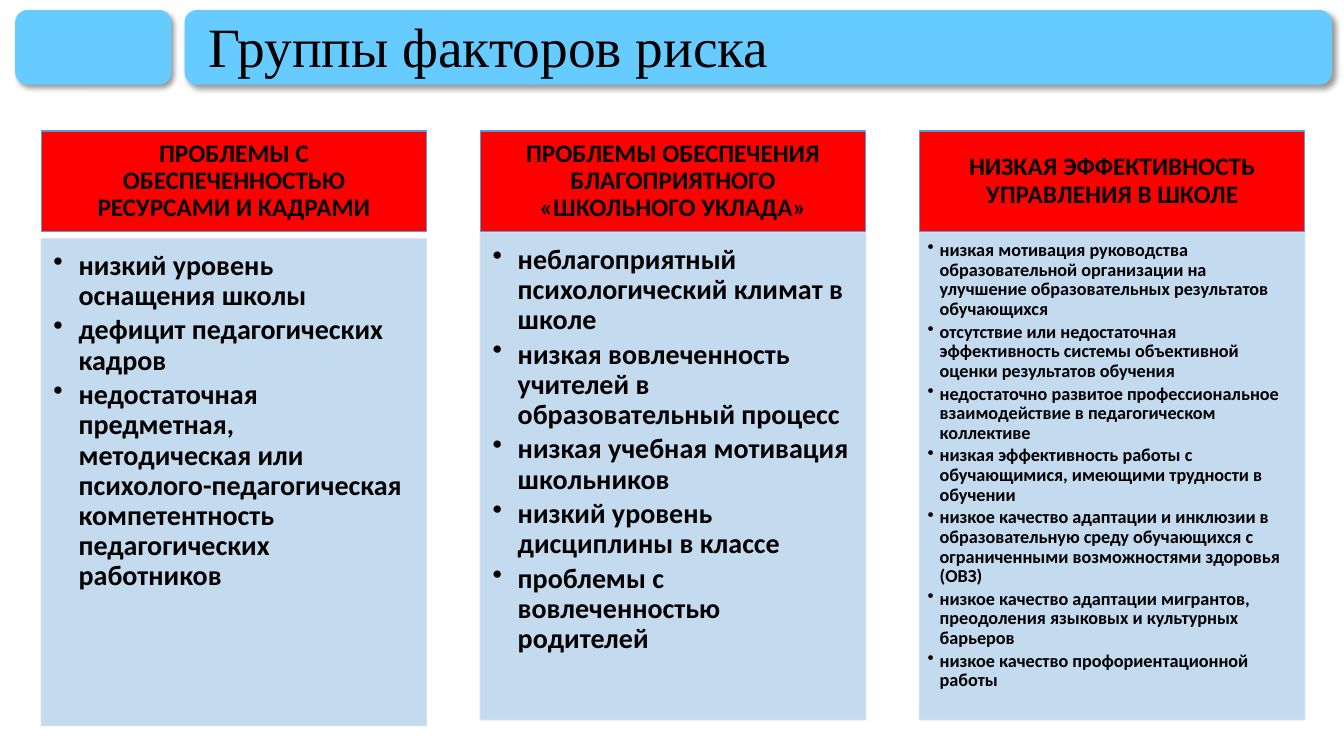
from lxml import etree
from pptx import Presentation
from pptx import util as u
from pptx.dml.color import RGBColor
from pptx.enum import shapes, text
from pptx.oxml.ns import qn

# Content
TITLE = "Группы факторов риска"
LARGE = dict(size=20, indent=0.25, insets=(0.12, 0.12, 0.16, 0.17))
SMALL = dict(size=13, indent=0.12, insets=(0.08, 0.08, 0.1, 0.11))
GROUPS = [
    dict(heading="ПРОБЛЕМЫ С ОБЕСПЕЧЕННОСТЬЮ РЕСУРСАМИ И КАДРАМИ", list_top=2.37, style=LARGE, factors=[
        "низкий уровень оснащения школы",
        "дефицит педагогических кадров",
        "недостаточная предметная, методическая или психолого-педагогическая "
        "компетентность педагогических работников",
    ]),
    dict(heading="ПРОБЛЕМЫ ОБЕСПЕЧЕНИЯ БЛАГОПРИЯТНОГО «ШКОЛЬНОГО УКЛАДА»", list_top=2.31, style=LARGE, factors=[
        "неблагоприятный психологический климат в школе",
        "низкая вовлеченность учителей в образовательный процесс",
        "низкая учебная мотивация школьников",
        "низкий уровень дисциплины в классе",
        "проблемы с вовлеченностью родителей",
    ]),
    dict(heading="НИЗКАЯ ЭФФЕКТИВНОСТЬ УПРАВЛЕНИЯ В ШКОЛЕ", list_top=2.31, style=SMALL, factors=[
        "низкая мотивация руководства образовательной организации на улучшение "
        "образовательных результатов обучающихся",
        "отсутствие или недостаточная эффективность системы объективной оценки результатов обучения",
        "недостаточно развитое профессиональное взаимодействие в педагогическом коллективе",
        "низкая эффективность работы с обучающимися, имеющими трудности в обучении",
        "низкое качество адаптации и инклюзии в образовательную среду обучающихся "
        "с ограниченными возможностями здоровья (ОВЗ)",
        "низкое качество адаптации мигрантов, преодоления языковых и культурных барьеров",
        "низкое качество профориентационной работы",
    ]),
]

# Colours
BLACK = RGBColor(0x00, 0x00, 0x00)
SKY = RGBColor(0x66, 0xCC, 0xFF)
RED = RGBColor(0xFF, 0x00, 0x00)
BLUE = RGBColor(0x5B, 0x9B, 0xD5)
PALE = RGBColor(0xBD, 0xD7, 0xEE)
EDGE = RGBColor(0xD2, 0xDE, 0xEF)

# Column grid, in inches
LEFT, STEP, WIDTH = 0.41, 4.355, 3.82
HEAD_TOP, HEAD_HEIGHT, LIST_HEIGHT = 1.3, 1, 4.83


def add_box(slide, kind, area, fill, line=None):
    box = slide.shapes.add_shape(kind, *map(u.Inches, area))
    box.shadow.inherit = False
    box.fill.solid()
    box.fill.fore_color.rgb = fill
    if line is None:
        box.line.fill.background()
    else:
        box.line.color.rgb = line
        box.line.width = u.Pt(1)
    return box


def add_shadow(box):
    effects = box._element.spPr.find(qn("a:effectLst"))
    shadow = etree.SubElement(effects, qn("a:outerShdw"), blurRad=str(u.Pt(4)), dist=str(u.Pt(3)),
                              dir="2700000", algn="tl", rotWithShape="0")
    colour = etree.SubElement(shadow, qn("a:srgbClr"), val="000000")
    etree.SubElement(colour, qn("a:alpha"), val="40000")


def set_opacity(box, percent):
    for colour in box._element.spPr.iter(qn("a:srgbClr")):
        etree.SubElement(colour, qn("a:alpha"), val=str(percent * 1000))


def write(box, lines, size, font="Calibri", bold=True, align=text.PP_ALIGN.LEFT,
          anchor=text.MSO_ANCHOR.TOP, insets=(0.1, 0.05, 0.1, 0.05), after=0, indent=None):
    frame = box.text_frame
    frame.word_wrap = True
    frame.auto_size = text.MSO_AUTO_SIZE.NONE
    frame.vertical_anchor = anchor
    frame.margin_left, frame.margin_top, frame.margin_right, frame.margin_bottom = map(u.Inches, insets)
    for index, line in enumerate(lines):
        para = frame.add_paragraph() if index else frame.paragraphs[0]
        para.alignment = align
        para.line_spacing = 0.9
        para.space_before = u.Pt(0)
        para.space_after = u.Pt(after)
        if indent:
            props = para._p.get_or_add_pPr()
            props.set("marL", str(u.Inches(indent)))
            props.set("indent", str(-u.Inches(indent)))
            etree.SubElement(props, qn("a:buChar"), char="•")
        span = para.add_run()
        span.text = line
        span.font.name = font
        span.font.size = u.Pt(size)
        span.font.bold = bold
        span.font.color.rgb = BLACK


deck = Presentation()
deck.slide_width, deck.slide_height = u.Inches(13.33), u.Inches(7.5)
page = deck.slides.add_slide(deck.slide_layouts[5])

# Title bars, with the title in front of them
for left, width in ((1.83, 11.38), (0.15, 1.55)):
    add_shadow(add_box(page, shapes.MSO_SHAPE.ROUNDED_RECTANGLE, (left, 0.1, width, 0.74), SKY))
title = page.shapes.title
title.left, title.top, title.width, title.height = map(u.Inches, (1.97, 0.16, 11.1, 0.66))
write(title, [TITLE], size=39.6, font="Times New Roman", bold=False, anchor=text.MSO_ANCHOR.MIDDLE)
page.shapes._spTree.append(title._element)

# Columns of risk factors
for column, group in enumerate(GROUPS):
    left = LEFT + column * STEP
    heading = add_box(page, shapes.MSO_SHAPE.RECTANGLE, (left, HEAD_TOP, WIDTH, HEAD_HEIGHT), RED, BLUE)
    write(heading, [group["heading"]], size=18, align=text.PP_ALIGN.CENTER,
          anchor=text.MSO_ANCHOR.MIDDLE, insets=(0.14, 0.08, 0.14, 0.08))
    factors = add_box(page, shapes.MSO_SHAPE.RECTANGLE,
                      (left, group["list_top"], WIDTH, LIST_HEIGHT), PALE, EDGE)
    set_opacity(factors, 90)
    style = group["style"]
    write(factors, group["factors"], after=round(style["size"] * 0.15), **style)

deck.save("out.pptx")
